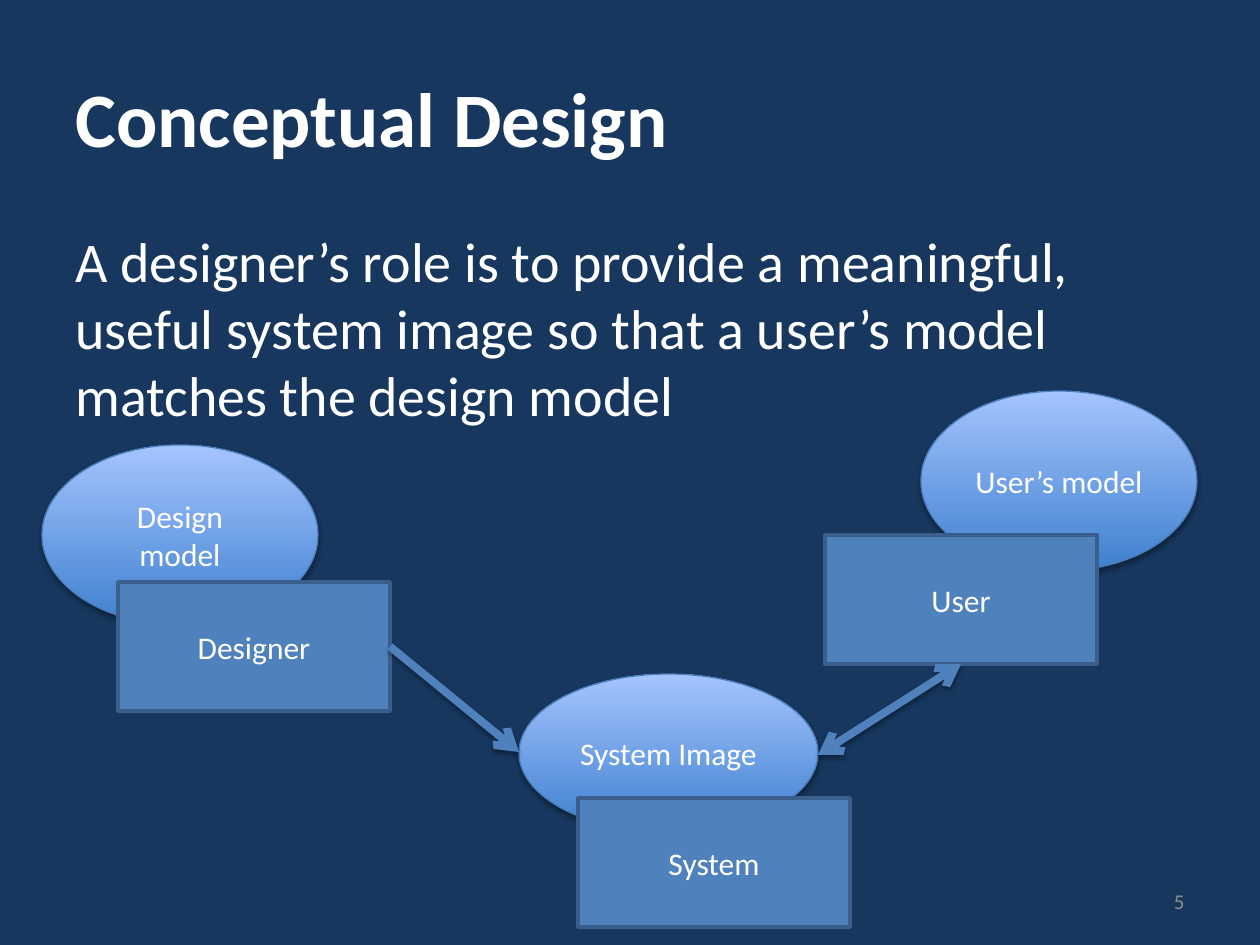
"""Build the Conceptual Design slide with its designer, system and user diagram."""
import lxml.etree
import pptx
import pptx.dml.color
import pptx.enum.shapes
import pptx.enum.text
import pptx.oxml.ns
import pptx.util

PX = 7257
LEFT, CENTER, RIGHT = (
    pptx.enum.text.PP_ALIGN.LEFT,
    pptx.enum.text.PP_ALIGN.CENTER,
    pptx.enum.text.PP_ALIGN.RIGHT,
)
TOP, MIDDLE = pptx.enum.text.MSO_ANCHOR.TOP, pptx.enum.text.MSO_ANCHOR.MIDDLE
OVAL = pptx.enum.shapes.MSO_SHAPE.OVAL
RECTANGLE = pptx.enum.shapes.MSO_SHAPE.RECTANGLE
qn = pptx.oxml.ns.qn
colour = pptx.dml.color.RGBColor.from_string


def write(shape, text, size, align, anchor=MIDDLE, ink="FFFFFF", bold=False):
    frame = shape.text_frame
    frame.word_wrap = True
    frame.auto_size = pptx.enum.text.MSO_AUTO_SIZE.NONE
    frame.vertical_anchor = anchor
    para = frame.paragraphs[0]
    para.alignment = align
    span = para.add_run()
    span.text = text
    span.font.name = "Calibri"
    span.font.size = pptx.util.Pt(size)
    span.font.bold = bold
    span.font.color.rgb = colour(ink)
    return para


def cast_shadow(properties, opacity, distance):
    effects = lxml.etree.SubElement(properties, qn("a:effectLst"))
    shadow = lxml.etree.SubElement(
        effects, qn("a:outerShdw"), blurRad=str(pptx.util.Pt(3.1)),
        dist=str(pptx.util.Pt(distance)), dir="5400000", rotWithShape="0")
    black = lxml.etree.SubElement(shadow, qn("a:srgbClr"), val="000000")
    lxml.etree.SubElement(black, qn("a:alpha"), val=str(opacity * 1000))


deck = pptx.Presentation()
deck.slide_width, deck.slide_height = 1260 * PX, 945 * PX
page = deck.slides.add_slide(deck.slide_layouts[5])
page.background.fill.solid()
page.background.fill.fore_color.rgb = colour("17375E")

title = page.shapes.title
title.left, title.top, title.width, title.height = 63 * PX, 38 * PX, 1134 * PX, 157 * PX
write(title, "Conceptual Design", 44, LEFT, bold=True)

nodes = {}
for kind, name, x, y, width, height in [
    (OVAL, "Design model", 42, 445, 276, 180),
    (OVAL, "User’s model", 921, 391, 276, 180),
    (RECTANGLE, "Designer", 118, 582, 272, 129),
    (RECTANGLE, "User", 825, 535, 272, 129),
    (OVAL, "System Image", 519, 674, 299, 158),
    (RECTANGLE, "System", 578, 798, 272, 129),
]:
    node = page.shapes.add_shape(kind, x * PX, y * PX, width * PX, height * PX)
    if kind == OVAL:
        node.fill.gradient()
        node.fill.gradient_angle = 90
        for stop, shade in zip(node.fill.gradient_stops, ["3F80CE", "A4C4FF"]):
            stop.color.rgb = colour(shade)
        node.line.color.rgb = colour("4B7EBC")
        node.line.width = pptx.util.Pt(0.75)
        cast_shadow(node.element.spPr, 35, 1.8)
    else:
        node.fill.solid()
        node.fill.fore_color.rgb = colour("4F81BD")
        node.line.color.rgb = colour("3A5F8C")
        node.line.width = pptx.util.Pt(2)
        node.shadow.inherit = False
    write(node, name, 18, CENTER)
    nodes[name] = node

for source, side, end_x, end_y, heads in [
    ("Designer", 3, 519, 752, ["a:tailEnd"]),
    ("User", 2, 818, 755, ["a:headEnd", "a:tailEnd"]),
]:
    arrow = page.shapes.add_connector(
        pptx.enum.shapes.MSO_CONNECTOR.STRAIGHT, 0, 0, end_x * PX, end_y * PX)
    arrow.begin_connect(nodes[source], side)
    arrow.line.color.rgb = colour("4F81BD")
    arrow.line.width = pptx.util.Pt(4.5)
    outline = arrow.element.spPr.find(qn("a:ln"))
    for head in heads:
        lxml.etree.SubElement(outline, qn(head), type="arrow")
    cast_shadow(arrow.element.spPr, 38, 1.6)

body = page.shapes.add_textbox(63 * PX, 220 * PX, 1134 * PX, 241 * PX)
statement = write(
    body,
    "A designer’s role is to provide a meaningful, useful system image "
    "so that a user’s model matches the design model",
    32, LEFT, TOP)
statement.space_before = pptx.util.Pt(6.4)

number = page.shapes.add_textbox(903 * PX, 876 * PX, 294 * PX, 50 * PX)
write(number, "5", 12, RIGHT, ink="8C8C8C")

deck.save("out.pptx")
